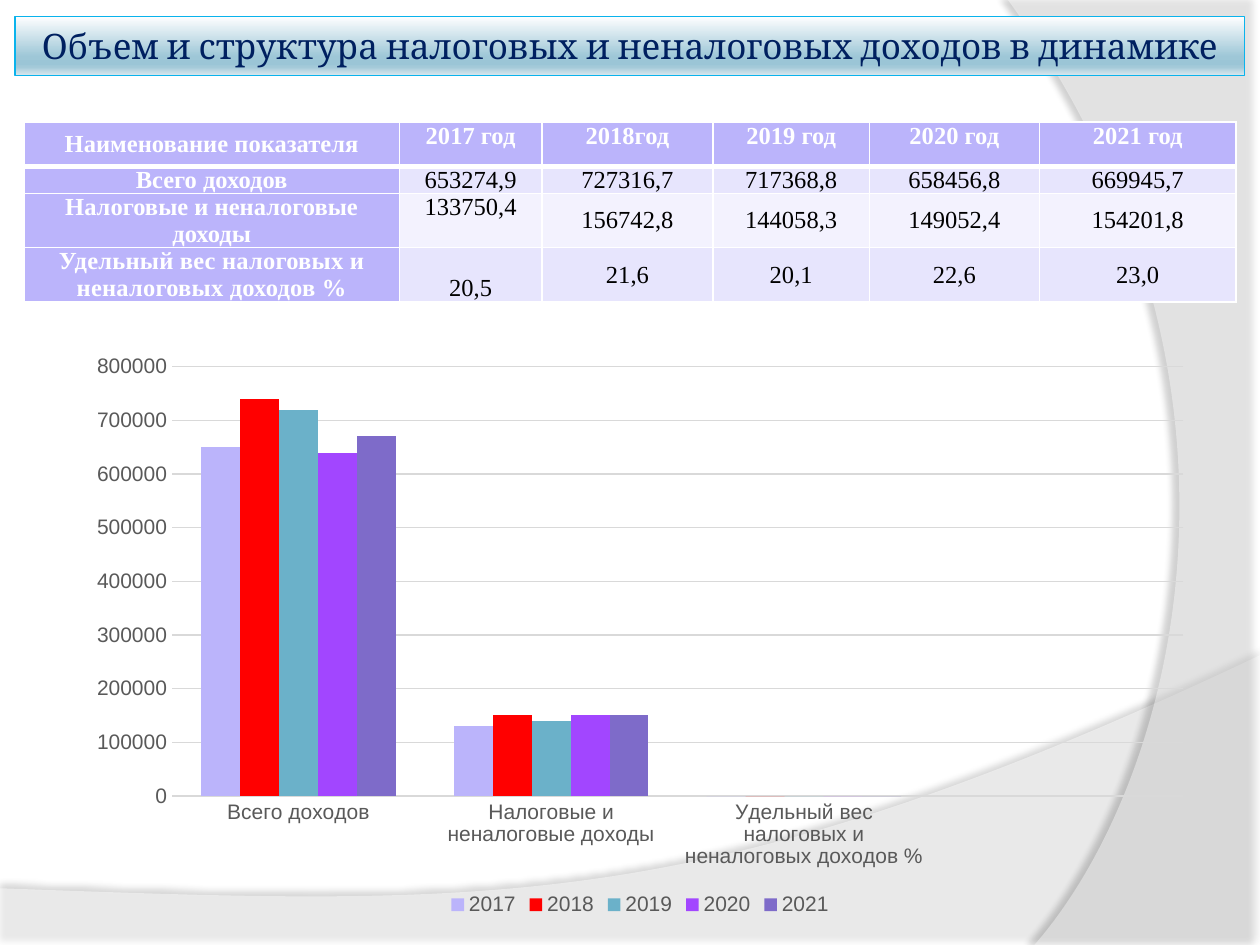
from lxml.etree import SubElement
from pptx import Presentation
from pptx.chart.data import CategoryChartData
from pptx.dml.color import RGBColor
from pptx.enum.chart import XL_CHART_TYPE, XL_LEGEND_POSITION, XL_TICK_MARK
from pptx.enum.shapes import MSO_SHAPE
from pptx.enum.text import MSO_ANCHOR, PP_ALIGN
from pptx.oxml import parse_xml
from pptx.oxml.ns import nsdecls, qn
from pptx.util import Inches, Pt

COLORS = {
    "white": "FFFFFF", "black": "000000", "title": "002060", "title_line": "0AB3EC",
    "lilac": "BBB4FB", "band_dark": "E7E5FD", "band_light": "F3F2FE",
    "axis_text": "595959", "grid": "D9D9D9",
    "2017": "BBB4FB", "2018": "FF0000", "2019": "6BB1C9", "2020": "A246FF", "2021": "7E6BC9",
}


def color(name):
    return RGBColor.from_string(COLORS[name])


def write(frame, text, font="Times New Roman", size=14, ink="black", bold=False, spacing=0):
    frame.word_wrap = True
    para = frame.paragraphs[0]
    para.alignment = PP_ALIGN.CENTER
    span = para.add_run()
    span.text = text
    span.font.name, span.font.size, span.font.bold = font, Pt(size), bold
    span.font.color.rgb = color(ink)
    if spacing:
        span._r.get_or_add_rPr().set("spc", str(int(spacing * 100)))


deck = Presentation()
deck.slide_width, deck.slide_height = Inches(10), Inches(7.5)
page = deck.slides.add_slide(deck.slide_layouts[6])

# Background waves, in hundredths of an inch: the last three points of each outline
# are the controls and end of a curve; then opacity and shadow (alpha, distance, direction)
waves = [
    ([(0, 705), (0, 751), (1000, 751), (1000, 520), (559, 729), (391, 719), (0, 705)],
     45, (35, 3.5, 270)),
    ([(1000, 0), (1000, 750), (821, 750), (935, 619), (1018, 300), (800, 0)],
     40, (45, 4, 180)),
]
for points, opacity, (shade, distance, direction) in waves:
    builder = page.shapes.build_freeform(*points[0], scale=Inches(0.01))
    builder.add_line_segments(points[1:], close=True)
    wave = builder.convert_to_shape()
    outline = wave._element.find(".//" + qn("a:path"))
    lines = outline.findall(qn("a:lnTo"))[-3:]
    bezier = parse_xml(f'<a:cubicBezTo {nsdecls("a")}/>')
    lines[0].addprevious(bezier)
    for line in lines:
        bezier.append(line[0])
        outline.remove(line)
    # The bounding box ends at the slide edge, not at the control points
    left = min(x for x, y in points)
    outline.set("w", str(1000 - left))
    wave.width = Inches((1000 - left) / 100)
    wave.fill.solid()
    wave.fill.fore_color.rgb = color("white")
    wave.line.fill.background()
    properties = wave.fill._xPr
    SubElement(properties.find(".//" + qn("a:srgbClr")), qn("a:alpha"), val=str(opacity * 1000))
    properties.append(parse_xml(
        f'<a:effectLst {nsdecls("a")}><a:outerShdw blurRad="{Pt(4)}" dist="{Pt(distance)}" '
        f'dir="{direction * 60000}" algn="ctr" rotWithShape="0"><a:srgbClr val="000000">'
        f'<a:alpha val="{shade * 1000}"/></a:srgbClr></a:outerShdw></a:effectLst>'))

# Title bar
title = page.shapes.add_shape(MSO_SHAPE.RECTANGLE, Inches(0.12), Inches(0.13),
                              Inches(9.76), Inches(0.47))
title.shadow.inherit = False
title.fill.gradient()
title.fill.gradient_angle = 270
stops = title.fill._xPr.find(".//" + qn("a:gsLst"))
for stop in list(stops):
    stops.remove(stop)
for position, shade in [(0, "FEFEFF"), (68, "9EC7D7"), (81, "9BC5D6"), (86, "A5CAD9"),
                        (100, "DAE8EE")]:
    stop = SubElement(stops, qn("a:gs"), pos=str(position * 1000))
    SubElement(stop, qn("a:srgbClr"), val=shade)
title.line.color.rgb = color("title_line")
title.line.width = Pt(0.75)
title.text_frame.vertical_anchor = MSO_ANCHOR.MIDDLE
write(title.text_frame, "Объем и структура налоговых и неналоговых доходов в динамике",
      font="Cambria", size=20, ink="title")

# Table of revenues
rows = [
    ["Наименование показателя", "2017 год", "2018год", "2019 год", "2020 год", "2021 год"],
    ["Всего доходов", "653274,9", "727316,7", "717368,8", "658456,8", "669945,7"],
    ["Налоговые и неналоговые доходы", "133750,4", "156742,8", "144058,3", "149052,4", "154201,8"],
    ["Удельный вес налоговых и неналоговых доходов %", "20,5", "21,6", "20,1", "22,6", "23,0"],
]
widths = [2.98, 1.13, 1.36, 1.24, 1.35, 1.56]
heights = [0.35, 0.21, 0.42, 0.42]
frame = page.shapes.add_table(len(rows), len(widths), Inches(0.19), Inches(0.97),
                              Inches(sum(widths)), Inches(sum(heights)))
table = frame.table
for column, width in zip(table.columns, widths):
    column.width = Inches(width)
for r, row in enumerate(rows):
    table.rows[r].height = Inches(heights[r])
    for c, text in enumerate(row):
        cell = table.cell(r, c)
        heading = r == 0 or c == 0
        cell.margin_left = cell.margin_right = Inches(0.07)
        cell.margin_top = cell.margin_bottom = 0
        cell.vertical_anchor = MSO_ANCHOR.MIDDLE
        if c == 1 or (r == 0 and c > 0):
            cell.vertical_anchor = MSO_ANCHOR.BOTTOM if r == 3 else MSO_ANCHOR.TOP
        write(cell.text_frame, text, ink="white" if heading else "black", bold=heading,
              spacing=0.1 if (r, c) == (3, 0) else 0)
        for side in ("L", "R", "T", "B"):
            thick = (r, side) in [(0, "B"), (1, "T")]
            border = SubElement(cell._tc.get_or_add_tcPr(), qn("a:ln" + side),
                                w=str(Pt(3 if thick else 1)))
            SubElement(SubElement(border, qn("a:solidFill")), qn("a:srgbClr"),
                       val=COLORS["white"])
        cell.fill.solid()
        band = "band_dark" if r % 2 else "band_light"
        cell.fill.fore_color.rgb = color("lilac" if heading else band)

# Column chart; the last category is empty
data = CategoryChartData()
data.categories = [row[0] for row in rows[1:]] + [""]
for year, values in {
    "2017": (650000, 130000),
    "2018": (740000, 150000),
    "2019": (720000, 140000),
    "2020": (640000, 150000),
    "2021": (670000, 150000),
}.items():
    data.add_series(year, values + (0, None))
chart = page.shapes.add_chart(XL_CHART_TYPE.COLUMN_CLUSTERED, Inches(0.59), Inches(2.73),
                              Inches(8.98), Inches(4.58), data).chart
chart.has_title = False
chart.font.name, chart.font.size = "Arial", Pt(10)
chart.has_legend = True
chart.legend.position = XL_LEGEND_POSITION.BOTTOM
chart.legend.include_in_layout = False
plot = chart.plots[0]
plot.gap_width, plot.overlap, plot.vary_by_categories = 150, 0, False
for series in plot.series:
    series.format.fill.solid()
    series.format.fill.fore_color.rgb = color(series.name)
for axis in (chart.category_axis, chart.value_axis):
    axis.major_tick_mark = axis.minor_tick_mark = XL_TICK_MARK.NONE
    axis.format.line.fill.background()
for font in (chart.category_axis.tick_labels.font, chart.value_axis.tick_labels.font,
             chart.legend.font):
    font.name, font.size = "Arial", Pt(12)
    font.color.rgb = color("axis_text")
chart.value_axis.minimum_scale, chart.value_axis.maximum_scale = 0, 800000
chart.value_axis.major_unit = 100000
chart.value_axis.has_major_gridlines = True
grid = chart.value_axis.major_gridlines.format.line
grid.color.rgb = color("grid")
grid.width = Pt(0.75)

deck.save("out.pptx")
